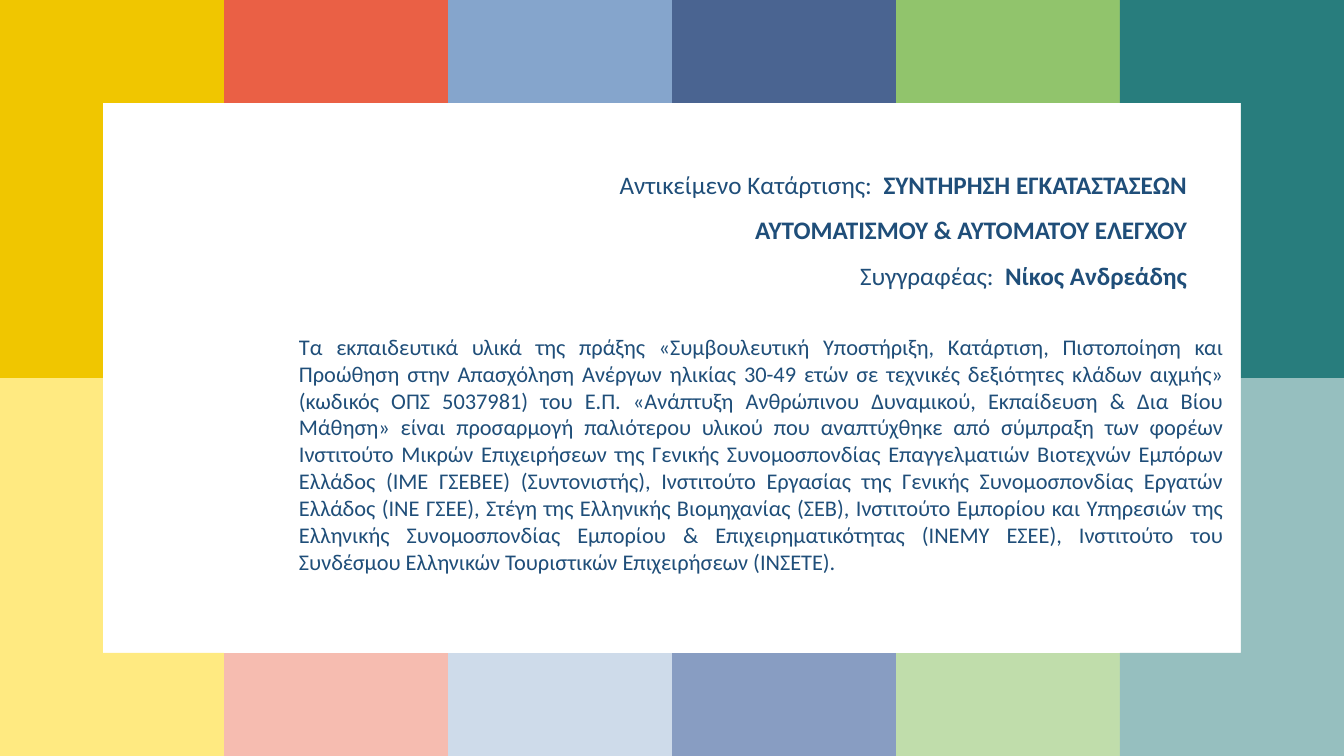
import pptx
import pptx.util
import pptx.dml.color
import pptx.enum.text

SCALE = 12192000 / 1344  # EMU in one px
WIDTH, HEIGHT, MIDDLE = 1344, 756, 378
PANEL_LEFT, PANEL_TOP, PANEL_RIGHT, PANEL_BOTTOM = 103, 103, 1241, 653

TOP_COLOURS = ["F0C600", "EA6045", "85A5CC", "4A6491", "91C46C", "287D7D"]
BOTTOM_COLOURS = ["FFEA81", "F6BCB0", "CEDBEA", "889DC2", "C0DDAB", "96BFBF"]
TILE = WIDTH // len(TOP_COLOURS)

FUNDING_NOTE = (
    "Τα εκπαιδευτικά υλικά της πράξης «Συμβουλευτική Υποστήριξη, Κατάρτιση, "
    "Πιστοποίηση και Προώθηση στην Απασχόληση Ανέργων ηλικίας 30-49 ετών σε "
    "τεχνικές δεξιότητες κλάδων αιχμής» (κωδικός ΟΠΣ 5037981) του Ε.Π. "
    "«Ανάπτυξη Ανθρώπινου Δυναμικού, Εκπαίδευση & Δια Βίου Μάθηση» είναι "
    "προσαρμογή παλιότερου υλικού που αναπτύχθηκε από σύμπραξη των φορέων "
    "Ινστιτούτο Μικρών Επιχειρήσεων της Γενικής Συνομοσπονδίας Επαγγελματιών "
    "Βιοτεχνών Εμπόρων Ελλάδος (ΙΜΕ ΓΣΕΒΕΕ) (Συντονιστής), Ινστιτούτο Εργασίας "
    "της Γενικής Συνομοσπονδίας Εργατών Ελλάδος (ΙΝΕ ΓΣΕΕ), Στέγη της Ελληνικής "
    "Βιομηχανίας (ΣΕΒ), Ινστιτούτο Εμπορίου και Υπηρεσιών της Ελληνικής "
    "Συνομοσπονδίας Εμπορίου & Επιχειρηματικότητας (ΙΝΕΜΥ ΕΣΕΕ), Ινστιτούτο του "
    "Συνδέσμου Ελληνικών Τουριστικών Επιχειρήσεων (ΙΝΣΕΤΕ)."
)
COURSE_LINES = [
    [("Αντικείμενο Κατάρτισης:  ", False),
     ("ΣΥΝΤΗΡΗΣΗ ΕΓΚΑΤΑΣΤΑΣΕΩΝ ΑΥΤΟΜΑΤΙΣΜΟΥ & ΑΥΤΟΜΑΤΟΥ ΕΛΕΓΧΟΥ", True)],
    [("Συγγραφέας:  ", False), ("Νίκος Ανδρεάδης", True)],
]


def px(length):
    return pptx.util.Emu(round(length * SCALE))


def colour(value):
    return pptx.dml.color.RGBColor.from_string(value)


def add_span(para, text, font="Calibri", size=18, ink="1F4E79", bold=False):
    span = para.add_run()
    span.text = text
    span.font.name = font
    span.font.size = pptx.util.Pt(size)
    span.font.bold = bold
    span.font.color.rgb = colour(ink)


class Painter:
    def __init__(self, page):
        self.page = page

    def polygon(self, points, fill):
        builder = self.page.shapes.build_freeform(*points[0], scale=SCALE)
        builder.add_line_segments(points[1:], close=True)
        shape = builder.convert_to_shape()
        shape.shadow.inherit = False
        shape.fill.solid()
        shape.fill.fore_color.rgb = colour(fill)
        shape.line.fill.background()

    def tile_row(self, colours, edge, panel_edge):
        """Tiles from the slide edge to the panel; the end ones turn its corners."""
        for column, fill in enumerate(colours):
            left, right = column * TILE, (column + 1) * TILE
            if left == 0:
                outer, inner, side = left, right, PANEL_LEFT
            elif right == WIDTH:
                outer, inner, side = right, left, PANEL_RIGHT
            else:
                self.polygon([(left, edge), (right, edge),
                              (right, panel_edge), (left, panel_edge)], fill)
                continue
            self.polygon([(outer, edge), (inner, edge), (inner, panel_edge),
                          (side, panel_edge), (side, MIDDLE), (outer, MIDDLE)], fill)

    def text(self, left, top, width, height, lines, align, size, spacing=1.0):
        """Each line is a list of (text, bold) pairs."""
        box = self.page.shapes.add_textbox(px(left), px(top), px(width), px(height))
        frame = box.text_frame
        frame.word_wrap = True
        frame.auto_size = pptx.enum.text.MSO_AUTO_SIZE.SHAPE_TO_FIT_TEXT
        frame.margin_left = frame.margin_right = px(5)
        frame.margin_top = frame.margin_bottom = px(3)
        for number, line in enumerate(lines):
            para = frame.add_paragraph() if number else frame.paragraphs[0]
            para.alignment = align
            para.line_spacing = spacing
            for text, bold in line:
                add_span(para, text, size=size, bold=bold)


def main():
    deck = pptx.Presentation()
    deck.slide_width, deck.slide_height = px(WIDTH), px(HEIGHT)
    blank_layout = deck.slide_layouts.get_by_name("Blank")
    painter = Painter(deck.slides.add_slide(blank_layout))
    painter.tile_row(TOP_COLOURS, 0, PANEL_TOP)
    painter.tile_row(BOTTOM_COLOURS, HEIGHT, PANEL_BOTTOM)
    align = pptx.enum.text.PP_ALIGN
    painter.text(294, 330, 935, 249, [[(FUNDING_NOTE, False)]], align.JUSTIFY, 16)
    painter.text(487, 151, 705, 142, COURSE_LINES, align.RIGHT, 18, spacing=1.5)
    deck.save("out.pptx")


if __name__ == "__main__":
    main()
